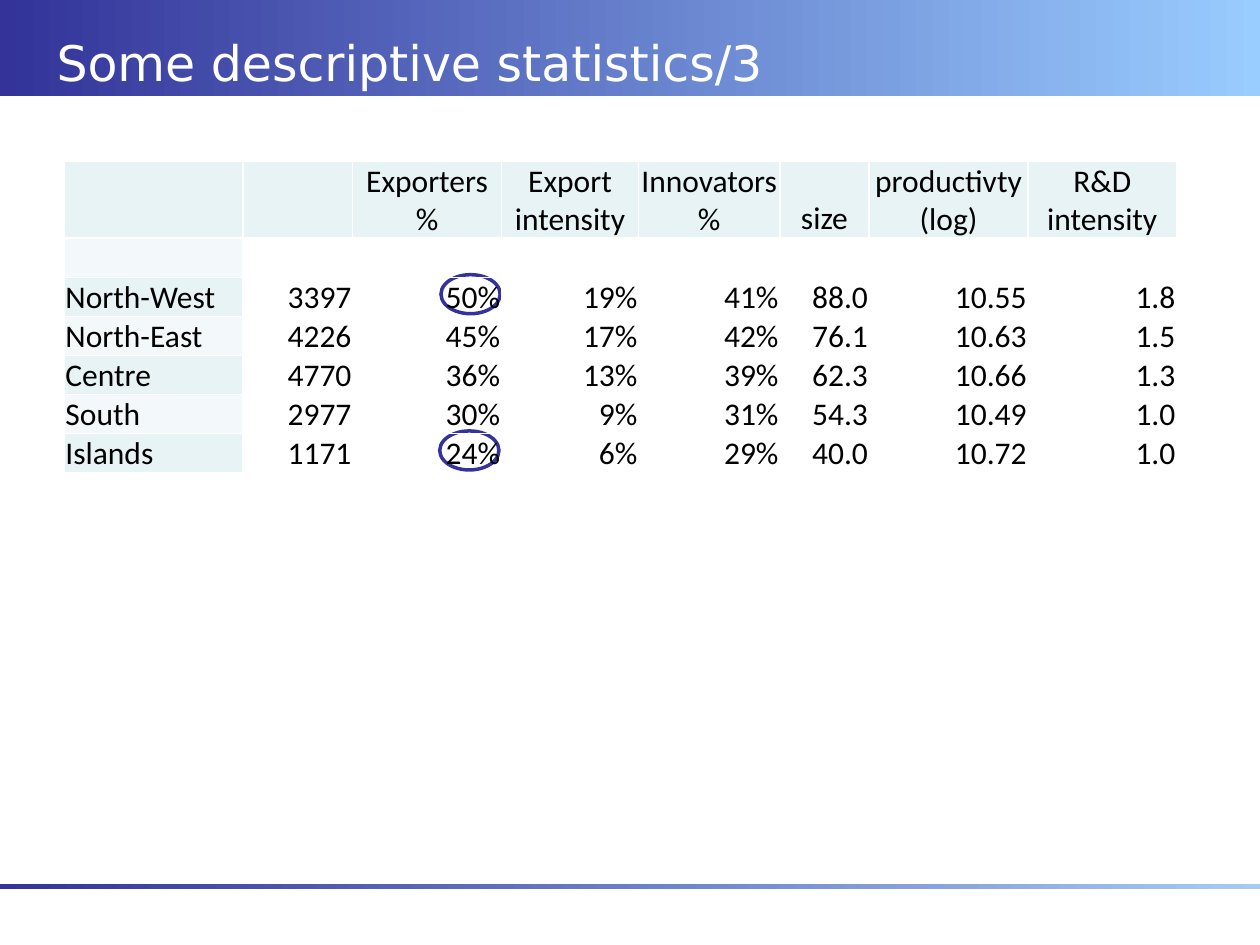
from lxml import etree
from pptx import Presentation
from pptx.dml.color import RGBColor
from pptx.enum.shapes import MSO_SHAPE
from pptx.enum.text import MSO_ANCHOR, PP_ALIGN
from pptx.oxml.ns import qn
from pptx.util import Inches, Pt

COLORS = {
    "navy": "333399",
    "sky": "99CCFF",
    "pale_sky": "A5CBF3",
    "white": "FFFFFF",
    "black": "000000",
    "band_dark": "E7F3F4",
    "band_light": "F3F9FA",
}
HEADERS = ["", "", "Exporters %", "Export intensity", "Innovators %", "size",
           "productivty (log)", "R&D intensity"]
ROWS = [
    [""] * 8,
    ["North-West", "3397", "50%", "19%", "41%", "88.0", "10.55", "1.8"],
    ["North-East", "4226", "45%", "17%", "42%", "76.1", "10.63", "1.5"],
    ["Centre", "4770", "36%", "13%", "39%", "62.3", "10.66", "1.3"],
    ["South", "2977", "30%", "9%", "31%", "54.3", "10.49", "1.0"],
    ["Islands", "1171", "24%", "6%", "29%", "40.0", "10.72", "1.0"],
]
COL_WIDTHS = [1.42, 0.87, 1.18, 1.09, 1.12, 0.71, 1.26, 1.18]
HEADER_HEIGHT, ROW_HEIGHT = 0.47, 0.23


def rgb(name):
    return RGBColor.from_string(COLORS[name])


def add_gradient_bar(s, left, top, width, height, start, end):
    bar = s.shapes.add_shape(MSO_SHAPE.RECTANGLE, Inches(left), Inches(top),
                             Inches(width), Inches(height))
    bar.shadow.inherit = False
    bar.line.fill.background()
    bar.fill.gradient()
    bar.fill.gradient_angle = 0
    for stop, color, position in zip(bar.fill.gradient_stops, (start, end), (0, 1)):
        stop.color.rgb = rgb(color)
        stop.position = position


def add_title(s, left, top, width, height, text):
    tf = s.shapes.add_textbox(Inches(left), Inches(top), Inches(width),
                              Inches(height)).text_frame
    tf.word_wrap = True
    tf.margin_top = Inches(0.09)
    p = tf.paragraphs[0]
    p.text = text
    p.font.name = "DejaVu Sans"
    p.font.size = Pt(28)
    p.font.color.rgb = rgb("white")


def add_highlight(s, left, top, width=0.47, height=0.31):
    """Ring that marks a value of the table drawn over it."""
    ring = s.shapes.add_shape(MSO_SHAPE.OVAL, Inches(left), Inches(top),
                              Inches(width), Inches(height))
    ring.shadow.inherit = False
    ring.fill.solid()
    ring.fill.fore_color.rgb = rgb("white")
    ring.line.color.rgb = rgb("navy")
    ring.line.width = Pt(2)


def set_borders(cell, top_width):
    tc_pr = cell._tc.get_or_add_tcPr()
    widths = {"a:lnL": 1, "a:lnR": 1, "a:lnT": top_width, "a:lnB": 1}
    for i, (tag, width) in enumerate(widths.items()):
        ln = etree.Element(qn(tag), w=str(Pt(width)))
        fill = etree.SubElement(ln, qn("a:solidFill"))
        etree.SubElement(fill, qn("a:srgbClr"), val=COLORS["white"])
        tc_pr.insert(i, ln)


def style_cell(cell, text, align, fill):
    cell.margin_left = cell.margin_right = cell.margin_top = Inches(0.01)
    cell.margin_bottom = 0
    cell.vertical_anchor = MSO_ANCHOR.BOTTOM
    p = cell.text_frame.paragraphs[0]
    p.text = text
    p.alignment = align
    p.font.name = "Calibri"
    p.font.size = Pt(18)
    p.font.color.rgb = rgb("black")
    if fill:
        cell.fill.solid()
        cell.fill.fore_color.rgb = rgb(fill)
    else:
        cell.fill.background()


def add_statistics_table(s, left, top):
    data = [HEADERS] + ROWS
    height = HEADER_HEIGHT + ROW_HEIGHT * len(ROWS)
    table = s.shapes.add_table(len(data), len(HEADERS), Inches(left), Inches(top),
                               Inches(sum(COL_WIDTHS)), Inches(height)).table
    table.first_row = table.horz_banding = False
    for column, width in zip(table.columns, COL_WIDTHS):
        column.width = Inches(width)
    for r, values in enumerate(data):
        table.rows[r].height = Inches(ROW_HEIGHT if r else HEADER_HEIGHT)
        for c, value in enumerate(values):
            cell = table.cell(r, c)
            if r == 0:
                align = PP_ALIGN.CENTER
            else:
                align = PP_ALIGN.RIGHT if c else PP_ALIGN.LEFT
            shaded = r == 0 or c == 0
            band = "band_light" if r % 2 else "band_dark"
            style_cell(cell, value, align, band if shaded else None)
            if shaded:
                set_borders(cell, top_width=1 if r else 1.5)


def main():
    prs = Presentation()
    prs.slide_width, prs.slide_height = Inches(10), Inches(7.5)
    s = prs.slides.add_slide(prs.slide_layouts[6])
    add_gradient_bar(s, 0, 0, 10, 0.76, "navy", "sky")
    add_gradient_bar(s, 0, 7.02, 10, 0.04, "navy", "pale_sky")
    add_highlight(s, 3.49, 3.42)
    add_highlight(s, 3.5, 2.18)
    add_title(s, 0.35, 0.17, 9.65, 0.76, "Some descriptive statistics/3")
    add_statistics_table(s, 0.51, 1.28)
    prs.save("out.pptx")


if __name__ == "__main__":
    main()
